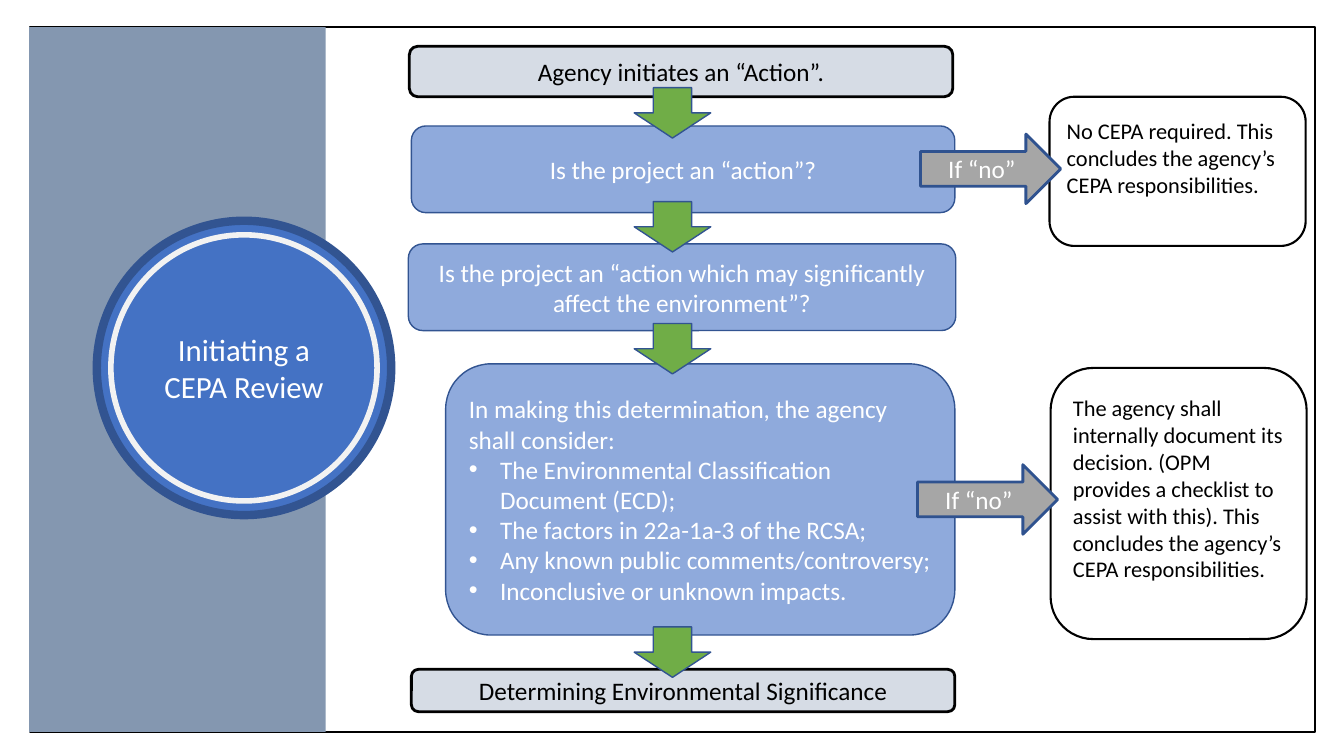
"""Build the slide that shows how a CEPA review is initiated."""
from lxml import etree
from pptx import Presentation
from pptx.dml.color import RGBColor
from pptx.enum.shapes import MSO_SHAPE
from pptx.enum.text import MSO_ANCHOR, MSO_AUTO_SIZE, PP_ALIGN
from pptx.oxml.ns import qn
from pptx.util import Inches, Pt

RECT, ROUNDED, OVAL = MSO_SHAPE.RECTANGLE, MSO_SHAPE.ROUNDED_RECTANGLE, MSO_SHAPE.OVAL
RIGHT_ARROW, DOWN_ARROW = MSO_SHAPE.RIGHT_ARROW, MSO_SHAPE.DOWN_ARROW
LEFT, CENTER = PP_ALIGN.LEFT, PP_ALIGN.CENTER
MIDDLE, NO_AUTOFIT = MSO_ANCHOR.MIDDLE, MSO_AUTO_SIZE.NONE

BLACK = RGBColor(0x00, 0x00, 0x00)
WHITE = RGBColor(0xFF, 0xFF, 0xFF)
PALE_GRAY = RGBColor(0xD6, 0xDC, 0xE5)
LIGHT_BLUE = RGBColor(0x8F, 0xAA, 0xDC)
BLUE = RGBColor(0x44, 0x72, 0xC4)
DARK_BLUE = RGBColor(0x32, 0x54, 0x91)
NAVY = RGBColor(0x2F, 0x52, 0x8F)
SLATE = RGBColor(0x84, 0x97, 0xB0)
GRAY = RGBColor(0xA6, 0xA6, 0xA6)
GREEN = RGBColor(0x70, 0xAD, 0x47)
OFF_WHITE = RGBColor(0xF2, 0xF2, 0xF2)

FONT = "Calibri"
BULLET_INDENT = Inches(0.31)


def add_bullet(paragraph):
    """Give the paragraph a round bullet with a hanging indent."""
    properties = paragraph._p.get_or_add_pPr()
    properties.set("marL", str(BULLET_INDENT))
    properties.set("indent", str(-BULLET_INDENT))
    etree.SubElement(properties, qn("a:buFont"), typeface="Arial")
    etree.SubElement(properties, qn("a:buChar"), char="•")


def write(shape, text, *, size=18, color=WHITE, align=CENTER, bullets=(), bottom=0.05):
    """Fill a shape with a lead paragraph and optional bullets."""
    frame = shape.text_frame
    frame.word_wrap = True
    frame.auto_size = NO_AUTOFIT
    frame.vertical_anchor = MIDDLE
    frame.margin_bottom = Inches(bottom)
    for index, line in enumerate((text, *bullets)):
        paragraph = frame.add_paragraph() if index else frame.paragraphs[0]
        if index:
            add_bullet(paragraph)
        paragraph.alignment = align
        paragraph.line_spacing = 1.0
        run = paragraph.add_run()
        run.text = line
        run.font.name = FONT
        run.font.size = Pt(size)
        run.font.color.rgb = color


class FlowSlide:
    """Hold the current slide and the style of its flowchart parts."""

    def __init__(self, slide):
        self.slide = slide

    def shape(self, kind, place, fill=None, line=None, width=1):
        """Add a preset shape at left, top, width, height."""
        shape = self.slide.shapes.add_shape(kind, *map(Inches, place))
        shape.shadow.inherit = False
        if fill is None:
            shape.fill.background()
        else:
            shape.fill.solid()
            shape.fill.fore_color.rgb = fill
        if line is None:
            shape.line.fill.background()
        else:
            shape.line.color.rgb = line
            shape.line.width = Pt(width)
        return shape

    def endpoint(self, place, text):
        """Add a first or last step."""
        write(self.shape(ROUNDED, place, PALE_GRAY, BLACK, 2), text, color=BLACK)

    def step(self, place, text, **text_format):
        """Add a blue question or consideration step."""
        write(self.shape(ROUNDED, place, LIGHT_BLUE, DARK_BLUE), text, **text_format)

    def outcome(self, place, text, bottom):
        """Add a white box that concludes the review."""
        box = self.shape(ROUNDED, place, None, BLACK, 1.5)
        write(box, text, size=16, color=BLACK, align=LEFT, bottom=bottom)

    def no_arrow(self, left, top):
        """Add a labelled arrow to an outcome."""
        write(self.shape(RIGHT_ARROW, (left, top, 1.39, 0.69), GRAY, NAVY, 2), "If “no”")

    def down_arrow(self, top):
        """Add an arrow to the next step."""
        self.shape(DOWN_ARROW, (6.29, top, 0.76, 0.5), GREEN, DARK_BLUE)

    def title(self, place, text):
        """Place the title on top of the shapes added so far."""
        title = self.slide.shapes.title
        title.left, title.top, title.width, title.height = map(Inches, place)
        write(title, text, size=22)
        title.element.getparent().append(title.element)


def main():
    """Draw the flowchart and save it."""
    deck = Presentation()
    deck.slide_width, deck.slide_height = Inches(13.33), Inches(7.5)
    flow = FlowSlide(deck.slides.add_slide(deck.slide_layouts[5]))

    flow.endpoint((4.06, 0.46, 5.39, 0.5), "Agency initiates an “Action”.")
    flow.step((4.08, 1.25, 5.39, 0.86), "Is the project an “action”?")
    flow.step((4.05, 2.42, 5.43, 0.86),
              "Is the project an “action which may significantly affect the environment”?")
    flow.endpoint((4.08, 6.64, 5.39, 0.42), "Determining Environmental Significance")
    flow.outcome((10.41, 0.96, 2.54, 1.48),
                 "No CEPA required. This concludes the agency’s CEPA responsibilities.", 0.32)
    flow.outcome((10.42, 3.65, 2.54, 2.69),
                 "The agency shall internally document its decision. (OPM provides a checklist "
                 "to assist with this). This concludes the agency’s CEPA responsibilities.", 0.35)
    flow.shape(RECT, (0.3, 0.27, 12.74, 6.99), None, BLACK, 1.5)
    flow.step((4.42, 3.61, 5.05, 2.69),
              "In making this determination, the agency shall consider:",
              align=LEFT,
              bullets=("The Environmental Classification Document (ECD);",
                       "The factors in 22a-1a-3 of the RCSA;",
                       "Any known public comments/controversy;",
                       "Inconclusive or unknown impacts."))
    flow.no_arrow(9.13, 1.33)
    flow.no_arrow(9.1, 4.61)
    for top in (0.87, 2, 3.21, 6.22):
        flow.down_arrow(top)

    flow.shape(RECT, (0.29, 0.27, 2.94, 6.99), SLATE)
    flow.shape(OVAL, (0.96, 2.19, 2.92, 2.92), BLUE, DARK_BLUE, 6)
    flow.shape(OVAL, (1.1, 2.33, 2.64, 2.64), None, OFF_WHITE, 4)
    flow.title((1.39, 2.62, 2.06, 2.06), "Initiating a CEPA Review")

    deck.save("out.pptx")


if __name__ == "__main__":
    main()
